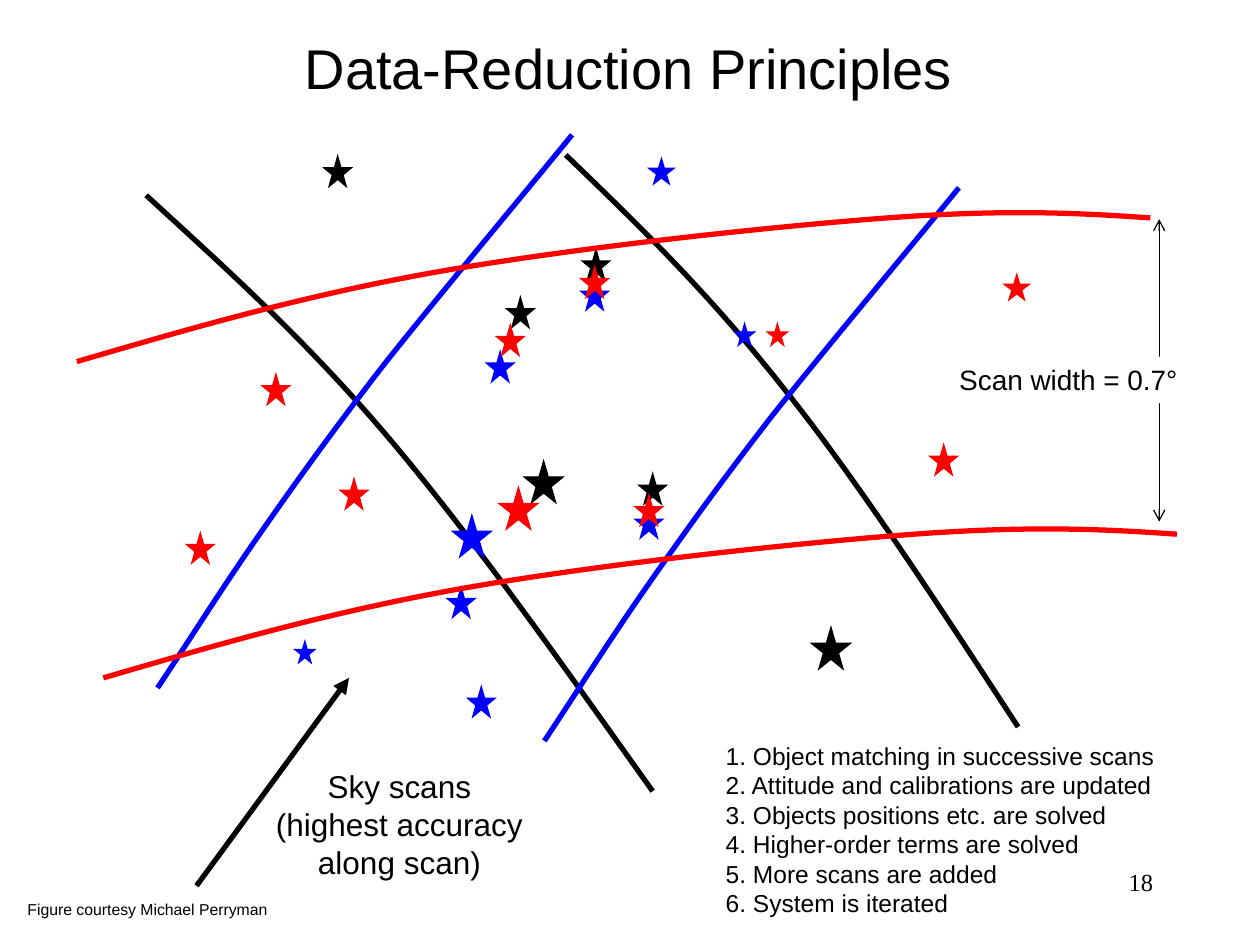
"""Build the slide on data-reduction principles with its three sky scans."""
from dataclasses import dataclass

from lxml.etree import SubElement
from pptx import Presentation
from pptx.dml.color import RGBColor
from pptx.enum.shapes import MSO_CONNECTOR, MSO_SHAPE
from pptx.enum.text import MSO_ANCHOR, MSO_AUTO_SIZE, PP_ALIGN
from pptx.oxml.ns import qn
from pptx.util import Inches, Pt

HUES = {"black": "000000", "blue": "0000FF", "red": "FF0000", "white": "FFFFFF"}
SIZES = {"big": (0.31, 0.33), "mid": (0.22, 0.24), "low": (0.2, 0.2), "wee": (0.16, 0.17)}
GRID = 100
Point = tuple[float, float]


@dataclass
class Star:
    """A star of a named size at its left and top."""
    size: str
    left: float
    top: float


@dataclass
class Curve:
    """A chain of cubic Bezier pieces, which may be shifted."""
    points: list[Point]
    shift: Point = (0, 0)


@dataclass
class Scan:
    """One sky scan: its hue, its two edges and its stars."""
    hue: str
    edges: list[Curve]
    stars: list[Star]


@dataclass
class Label:
    """Text lines with their box and format."""
    box: tuple[float, float, float, float]
    lines: list[str]
    size: float
    align: PP_ALIGN = PP_ALIGN.CENTER
    anchor: MSO_ANCHOR = MSO_ANCHOR.TOP
    wrap: bool = False
    font: str = "Arial"


BLUE = [(1.25, 5.46), (1.51, 5.07), (1.76, 4.67), (2.06, 4.24), (2.36, 3.81),
        (2.64, 3.42), (3.05, 2.89), (3.47, 2.36), (4.29, 1.38), (4.54, 1.07)]
RED = [(0.61, 2.87), (1.5, 2.61), (2.39, 2.35), (3.46, 2.16), (4.53, 1.97),
       (6.1, 1.8), (7.04, 1.73), (7.99, 1.66), (8.56, 1.69), (9.13, 1.73)]

SCANS = [
    Scan("black", [
        Curve([(1.16, 1.55), (1.78, 2.12), (2.41, 2.68), (3.08, 3.47),
               (3.75, 4.26), (4.46, 5.27), (5.18, 6.28)]),
        Curve([(4.49, 1.23), (5.05, 1.77), (5.61, 2.31), (6.21, 3.07),
               (6.81, 3.82), (7.44, 4.79), (8.08, 5.77)]),
    ], [
        Star("big", 4.16, 3.66), Star("mid", 4.02, 2.36), Star("mid", 5.07, 3.76),
        Star("mid", 4.62, 1.98), Star("mid", 2.57, 1.24), Star("big", 6.44, 4.98),
    ]),
    Scan("blue", [Curve(BLUE), Curve(BLUE, (3.07, 0.42))], [
        Star("big", 3.59, 4.09), Star("mid", 3.86, 2.79), Star("mid", 3.55, 4.66),
        Star("mid", 5.04, 4.03), Star("mid", 4.61, 2.22), Star("wee", 2.34, 5.09),
        Star("mid", 3.71, 5.45), Star("wee", 5.83, 2.57), Star("low", 5.15, 1.26),
    ]),
    Scan("red", [Curve(RED), Curve(RED, (0.21, 2.51))], [
        Star("big", 3.96, 3.87), Star("mid", 3.94, 2.58), Star("mid", 1.48, 4.23),
        Star("mid", 5.04, 3.93), Star("mid", 4.61, 2.12), Star("wee", 6.09, 2.57),
        Star("low", 7.97, 2.18), Star("mid", 7.38, 3.53), Star("mid", 2.08, 2.97),
        Star("mid", 2.7, 3.8),
    ]),
]

TITLE = Label((0.21, 0.2, 9.56, 0.67), ["Data-Reduction Principles"], 32,
              anchor=MSO_ANCHOR.MIDDLE, wrap=True)
TASKS = Label((5.66, 5.83, 4.08, 1.51), [
    "1. Object matching in successive scans",
    "2. Attitude and calibrations are updated",
    "3. Objects positions etc. are solved",
    "4. Higher-order terms are solved",
    "5. More scans are added",
    "6. System is iterated",
], 14, PP_ALIGN.LEFT, wrap=True)
WIDTH = Label((7.51, 2.83, 1.94, 0.37), ["Scan width = 0.7°"], 16)
NOTES = [
    Label((7.17, 6.83, 2.08, 0.5), ["18"], 14, PP_ALIGN.RIGHT, wrap=True,
          font="Times New Roman"),
    Label((2.09, 6.04, 2.16, 1), ["Sky scans", "(highest accuracy", "along scan)"], 18,
          anchor=MSO_ANCHOR.MIDDLE),
    Label((0.11, 7.09, 2.12, 0.25), ["Figure courtesy Michael Perryman"], 9),
]


def tint(hue: str) -> RGBColor:
    """Return the colour of a named hue."""
    return RGBColor.from_string(HUES[hue])


def apply(target, values: dict) -> None:
    """Set each named value on the target."""
    for name, value in values.items():
        setattr(target, name, value)


def write(shape, label: Label) -> None:
    """Place a shape and fill it with the label's text."""
    places = map(Inches, label.box)
    apply(shape, dict(zip(("left", "top", "width", "height"), places)))
    frame = shape.text_frame
    frame.text = "\n".join(label.lines)
    apply(frame, {"word_wrap": label.wrap, "auto_size": MSO_AUTO_SIZE.NONE,
                  "vertical_anchor": label.anchor})
    for line in frame.paragraphs:
        apply(line, {"alignment": label.align, "space_before": Pt(0), "line_spacing": 1.0})
        for run in line.runs:
            apply(run.font, {"name": label.font, "size": Pt(label.size)})
            run.font.color.rgb = tint("black")


def add_note(shapes, label: Label):
    """Add a text box for a label."""
    box = shapes.add_textbox(*map(Inches, label.box))
    write(box, label)
    return box


def bend(shape) -> None:
    """Turn each three line pieces of a freeform into one cubic piece."""
    lines = list(shape._element.iter(qn("a:lnTo")))
    for start in range(0, len(lines), 3):
        group = lines[start:start + 3]
        path = group[0].getparent()
        cubic = SubElement(path, qn("a:cubicBezTo"))
        for line in group:
            cubic.append(line[0])
            path.remove(line)


def add_edge(shapes, curve: Curve, hue: str) -> None:
    """Draw one edge of a scan."""
    right, down = curve.shift
    first, *rest = [((x + right) * GRID, (y + down) * GRID) for x, y in curve.points]
    path = shapes.build_freeform(*first, scale=Inches(1) / GRID)
    path.add_line_segments(rest, close=False)
    edge = path.convert_to_shape()
    bend(edge)
    edge.shadow.inherit = False
    edge.fill.background()
    edge.line.color.rgb = tint(hue)
    edge.line.width = Pt(3)


def add_star(shapes, star: Star, hue: str) -> None:
    """Draw one star with sharp points."""
    place = map(Inches, (star.left, star.top, *SIZES[star.size]))
    shape = shapes.add_shape(MSO_SHAPE.STAR_5_POINT, *place)
    shape.shadow.inherit = False
    shape.fill.solid()
    shape.fill.fore_color.rgb = shape.line.color.rgb = tint(hue)
    shape.line.width = Pt(0.75)
    SubElement(shape.line._get_or_add_ln(), qn("a:miter")).set("lim", "800000")


def add_arrow(shapes, start: Point, end: Point, width: float, tips: dict[str, str]) -> None:
    """Draw a black line with the given tips."""
    arrow = shapes.add_connector(MSO_CONNECTOR.STRAIGHT, *map(Inches, start + end))
    arrow.line.color.rgb = tint("black")
    arrow.line.width = Pt(width)
    for tag, kind in tips.items():
        SubElement(arrow.line._get_or_add_ln(), qn(f"a:{tag}")).set("type", kind)
    SubElement(arrow._element.spPr, qn("a:effectLst"))


def main() -> None:
    """Build and save the slide."""
    deck = Presentation()
    apply(deck, {"slide_width": Inches(10), "slide_height": Inches(7.5)})
    slide = deck.slides.add_slide(deck.slide_layouts[1])
    shapes = slide.shapes
    write(shapes.title, TITLE)
    body = slide.placeholders[1]
    write(body, TASKS)
    for line in body.text_frame.paragraphs:
        props = line._p.get_or_add_pPr()
        for name, size in {"marL": 0.5, "indent": -0.5}.items():
            props.set(name, str(Inches(size)))
        SubElement(props, qn("a:buNone"))
    for scan in SCANS:
        for edge in scan.edges:
            add_edge(shapes, edge, scan.hue)
        for star in scan.stars:
            add_star(shapes, star, scan.hue)
    add_arrow(shapes, (1.56, 7.03), (2.77, 5.38), 3, {"tailEnd": "triangle"})
    add_arrow(shapes, (9.2, 4.14), (9.2, 1.74), 0.75, {"headEnd": "arrow", "tailEnd": "arrow"})
    box = add_note(shapes, WIDTH)
    box.fill.solid()
    box.fill.fore_color.rgb = tint("white")
    for note in NOTES:
        add_note(shapes, note)
    deck.save("out.pptx")


if __name__ == "__main__":
    main()
